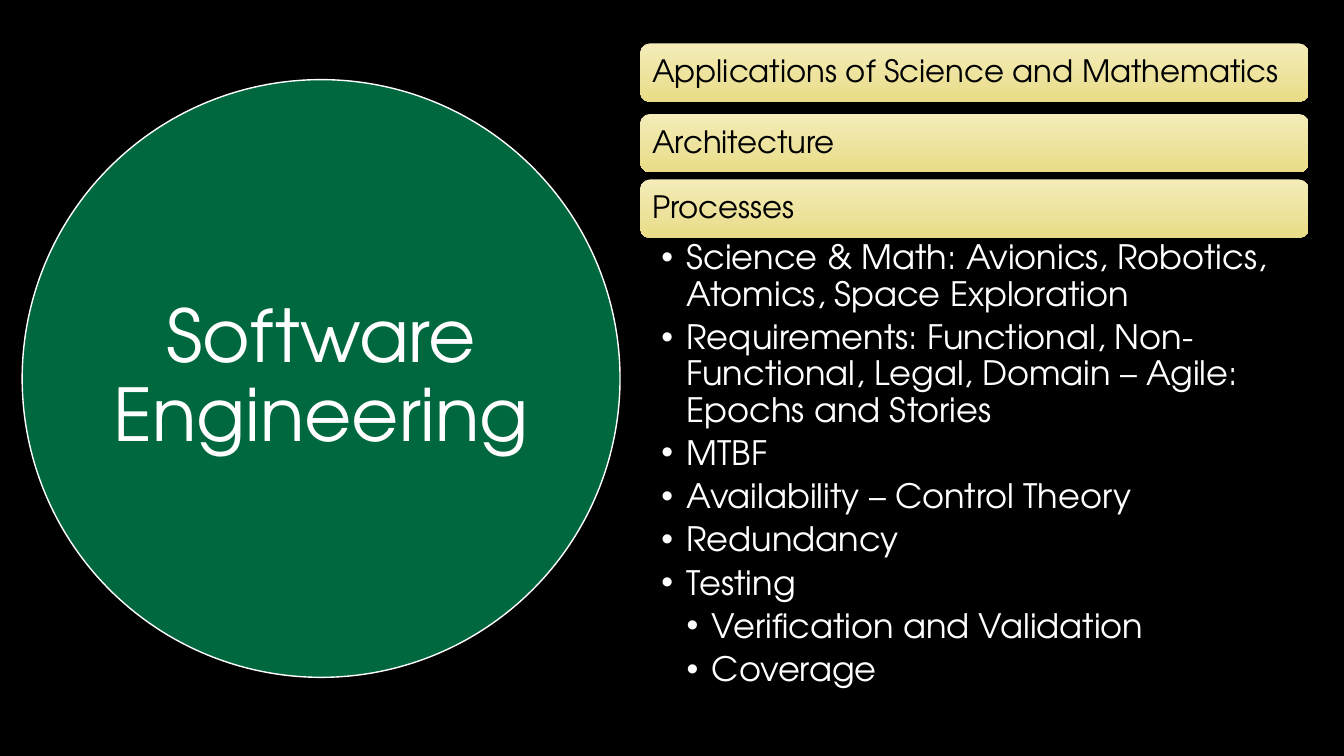
from dataclasses import dataclass

from lxml.etree import SubElement
from pptx import Presentation
from pptx.dml.color import RGBColor
from pptx.enum.shapes import MSO_SHAPE
from pptx.enum.text import MSO_ANCHOR, MSO_AUTO_SIZE, PP_ALIGN
from pptx.oxml.ns import qn
from pptx.util import Inches, Pt


@dataclass(frozen=True)
class Theme:
    """Colours, font and type sizes of the slide."""
    font: str = "TeX Gyre Adventor"
    background: RGBColor = RGBColor.from_string("000000")
    light: RGBColor = RGBColor.from_string("FFFFFF")
    dark: RGBColor = RGBColor.from_string("000000")
    circle: RGBColor = RGBColor.from_string("01D17D")
    bar_top: RGBColor = RGBColor.from_string("F4ECB9")
    bar_bottom: RGBColor = RGBColor.from_string("E8DC87")
    title_size: int = 52
    bar_size: int = 22
    bullet_size: int = 24


THEME = Theme()
TITLE = "Software Engineering"
BARS = [
    ("Applications of Science and Mathematics", 0),
    ("Architecture", 0.7),
    ("Processes", 1.35),
]
BULLETS = [
    ("Science & Math: Avionics, Robotics, Atomics, Space Exploration", 1),
    ("Requirements: Functional, Non-Functional, Legal, Domain – Agile: Epochs and Stories", 1),
    ("MTBF", 1),
    ("Availability – Control Theory", 1),
    ("Redundancy", 1),
    ("Testing", 1),
    ("Verification and Validation", 2),
    ("Coverage", 2),
]


def apply_format(target, values):
    """Set each attribute named in a dict of format values."""
    for name, value in values.items():
        setattr(target, name, value)


def format_frame(frame, anchor, margins):
    """Set wrapping, anchor and left, top, right, bottom margins in inches."""
    sides = ("margin_left", "margin_top", "margin_right", "margin_bottom")
    apply_format(frame, {
        "word_wrap": True,
        "auto_size": MSO_AUTO_SIZE.NONE,
        "vertical_anchor": anchor,
        **{side: Inches(margin) for side, margin in zip(sides, margins)},
    })


def format_paragraph(paragraph, size, color, alignment=PP_ALIGN.LEFT, space_after=0):
    """Set the spacing, alignment and font of a paragraph."""
    apply_format(paragraph, {
        "alignment": alignment,
        "line_spacing": 0.9,
        "space_before": Pt(0),
        "space_after": Pt(space_after),
    })
    apply_format(paragraph.font, {"name": THEME.font, "size": Pt(size), "bold": False})
    paragraph.font.color.rgb = color


def add_bullet(paragraph, level):
    """Give a paragraph a round bullet with a hanging indent."""
    properties = paragraph._p.get_or_add_pPr()
    properties.set("marL", str(Inches(0.25 * level)))
    properties.set("indent", str(Inches(-0.25)))
    SubElement(properties, qn("a:buFont")).set("typeface", "Arial")
    SubElement(properties, qn("a:buChar")).set("char", "•")


def add_title_circle(slide, left, top, diameter):
    """Place the title inside a translucent circle."""
    circle = slide.shapes.add_shape(
        MSO_SHAPE.OVAL, Inches(left), Inches(top), Inches(diameter), Inches(diameter))
    circle.shadow.inherit = False
    circle.fill.solid()
    circle.fill.fore_color.rgb = THEME.circle
    color = circle._element.spPr.find(qn("a:solidFill")).find(qn("a:srgbClr"))
    SubElement(color, qn("a:alpha")).set("val", "50000")
    circle.line.color.rgb = THEME.light
    circle.line.width = Pt(1)

    title = slide.shapes.title
    title._element.addprevious(circle._element)
    inset = 0.87
    side = Inches(diameter - 2 * inset)
    apply_format(title, {
        "left": Inches(left + inset), "top": Inches(top + inset),
        "width": side, "height": side,
    })
    title.text_frame.text = TITLE
    format_frame(title.text_frame, MSO_ANCHOR.MIDDLE, (0, 0, 0, 0))
    format_paragraph(title.text_frame.paragraphs[0], THEME.title_size, THEME.light,
                     PP_ALIGN.CENTER)


def add_bar(slide, text, left, top, width, height):
    """Add one rounded gradient bar with its label."""
    bar = slide.shapes.add_shape(
        MSO_SHAPE.ROUNDED_RECTANGLE, Inches(left), Inches(top), Inches(width), Inches(height))
    bar.shadow.inherit = False
    bar.line.fill.background()
    bar.fill.gradient()
    bar.fill.gradient_angle = 270
    for stop, color in zip(bar.fill.gradient_stops, (THEME.bar_top, THEME.bar_bottom)):
        stop.color.rgb = color
    bar.text_frame.text = text
    format_frame(bar.text_frame, MSO_ANCHOR.MIDDLE, (0.09, 0.09, 0.09, 0.09))
    format_paragraph(bar.text_frame.paragraphs[0], THEME.bar_size, THEME.dark)


def add_bullets(slide, left, top, width, height):
    """Add the two-level bulleted list."""
    box = slide.shapes.add_textbox(Inches(left), Inches(top), Inches(width), Inches(height))
    frame = box.text_frame
    format_frame(frame, MSO_ANCHOR.TOP, (0.21, 0.03, 0.19, 0.03))
    frame.text = "\n".join(text for text, _ in BULLETS)
    for paragraph, (_, level) in zip(frame.paragraphs, BULLETS):
        paragraph.level = level
        add_bullet(paragraph, level)
        format_paragraph(paragraph, THEME.bullet_size, THEME.light, space_after=5)


def add_topics(slide, left, top, width, height):
    """Stack the topic bars above the bulleted list."""
    bar_height = 0.58
    for text, offset in BARS:
        add_bar(slide, text, left, top + offset, width, bar_height)
    list_offset = BARS[-1][1] + bar_height
    add_bullets(slide, left, top + list_offset, width, height - list_offset)


def main():
    """Build and save the presentation."""
    presentation = Presentation()
    presentation.slide_width = Inches(13.33)
    presentation.slide_height = Inches(7.5)
    slide = presentation.slides.add_slide(presentation.slide_layouts.get_by_name("Title Only"))
    slide.background.fill.solid()
    slide.background.fill.fore_color.rgb = THEME.background
    add_title_circle(slide, 0.22, 0.79, 5.93)
    add_topics(slide, 6.35, 0.43, 6.63, 6.71)
    presentation.save("out.pptx")


if __name__ == "__main__":
    main()
